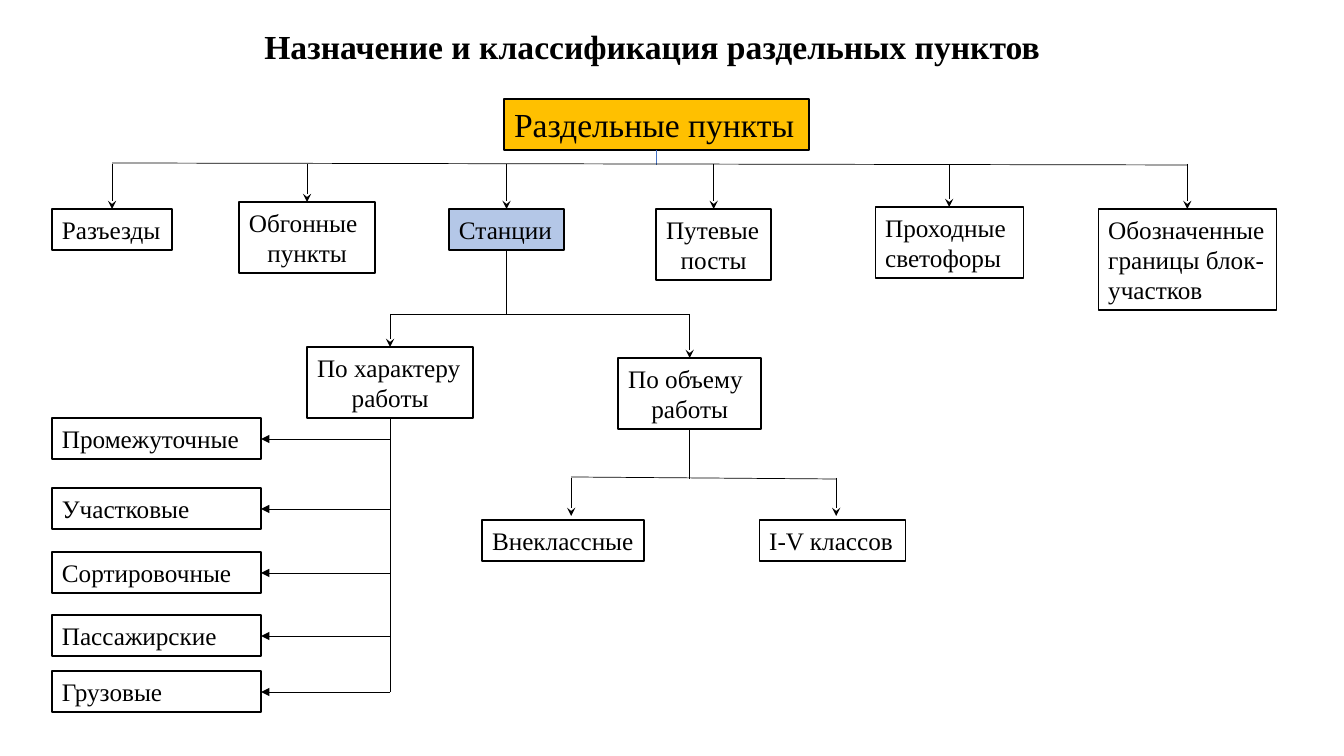
from lxml import etree
from pptx import Presentation, util as u
from pptx.dml.color import RGBColor
from pptx.enum import shapes, text
from pptx.oxml.ns import qn

PX = 914400 / 100.8
BLACK, WHITE, AMBER, PALE_BLUE, BLUE = "000000", "FFFFFF", "FFC000", "B4C7E7", "4472C4"
LEFT, CENTER = text.PP_ALIGN.LEFT, text.PP_ALIGN.CENTER

prs = Presentation()
prs.slide_width, prs.slide_height = u.Inches(13.33), u.Inches(7.5)
slide = prs.slides.add_slide(prs.slide_layouts[6])


def label(x, y, w, h, lines, last_align=LEFT, size=18, bold=False, fill=None):
    """Add a text box; a fill also brings a black border."""
    box = slide.shapes.add_textbox(*(round(v * PX) for v in (x, y, w, h)))
    if fill:
        box.fill.solid()
        box.fill.fore_color.rgb = RGBColor.from_string(fill)
        box.line.color.rgb = RGBColor.from_string(BLACK)
        box.line.width = u.Pt(1)
    frame = box.text_frame
    frame.word_wrap = True
    for i, line in enumerate(lines):
        para = frame.paragraphs[0] if i == 0 else frame.add_paragraph()
        para.alignment = last_align if i == len(lines) - 1 else LEFT
        run = para.add_run()
        run.text = line
        run.font.name, run.font.size, run.font.bold = "Times New Roman", u.Pt(size), bold
        run.font.color.rgb = RGBColor.from_string(BLACK)
    return frame


def link(x1, y1, x2, y2, arrow=None, color=BLACK):
    """Draw a thin line, with an arrowhead of the given type at its end."""
    line = slide.shapes.add_connector(
        shapes.MSO_CONNECTOR.STRAIGHT, *(round(v * PX) for v in (x1, y1, x2, y2)))
    line.line.color.rgb = RGBColor.from_string(color)
    line.line.width = u.Pt(0.5)
    if arrow:
        etree.SubElement(line.line._get_or_add_ln(), qn("a:tailEnd"), type=arrow)
    etree.SubElement(line._element.spPr, qn("a:effectLst"))


title = label(9, 0, 1286, 93, ["Назначение и классификация раздельных пунктов"],
              CENTER, size=24, bold=True)
title.vertical_anchor = text.MSO_ANCHOR.MIDDLE
label(504, 99, 305, 51, ["Раздельные пункты"], size=24, fill=AMBER)

# Kinds of separating points: left, top, width, lines, last line's alignment, fill
kinds = [
    (52, 209, 120, ["Разъезды"], LEFT, WHITE),
    (239, 202, 136, ["Обгонные", "пункты"], CENTER, WHITE),
    (449, 209, 115, ["Станции"], LEFT, PALE_BLUE),
    (656, 209, 115, ["Путевые", "посты"], CENTER, WHITE),
    (875, 207, 148, ["Проходные", "светофоры"], LEFT, WHITE),
    (1098, 209, 178, ["Обозначенные", "границы блок-", "участков"], LEFT, WHITE),
]
# Ways to class stations, then classes by volume of work
criteria = [
    (307, 347, 166, ["По характеру", "работы"], CENTER, WHITE),
    (618, 358, 143, ["По объему", "работы"], CENTER, WHITE),
]
volume_classes = [
    (482, 520, 162, ["Внеклассные"], LEFT, WHITE),
    (759, 520, 146, ["I-V классов"], LEFT, WHITE),
]
for x, y, w, lines, align, fill in kinds + criteria + volume_classes:
    label(x, y, w, 11 + 30 * len(lines), lines, align, fill=fill)

link(656, 150, 656, 165, color=BLUE)
link(112, 163, 1187, 165)
for x, y, w, *_ in kinds:
    link(x + w / 2, 164, x + w / 2, y, "stealth")

link(506, 250, 506, 314)
link(390, 314, 689, 314)
for x, y, w, *_ in criteria:
    link(x + w / 2, 314, x + w / 2, y, "stealth")

link(689, 429, 689, 479)
link(571, 477, 836, 479)
for x in (571, 836):
    link(x, 478, x, 516, "stealth")

# Stations by kind of work, hung on one stem
link(390, 418, 390, 692)
work_kinds = [(418, "Промежуточные"), (488, "Участковые"), (552, "Сортировочные"),
              (615, "Пассажирские"), (671, "Грузовые")]
for y, name in work_kinds:
    label(52, y, 209, 41, [name], fill=WHITE)
    link(390, y + 21, 261, y + 21, "triangle")

prs.save("out.pptx")
